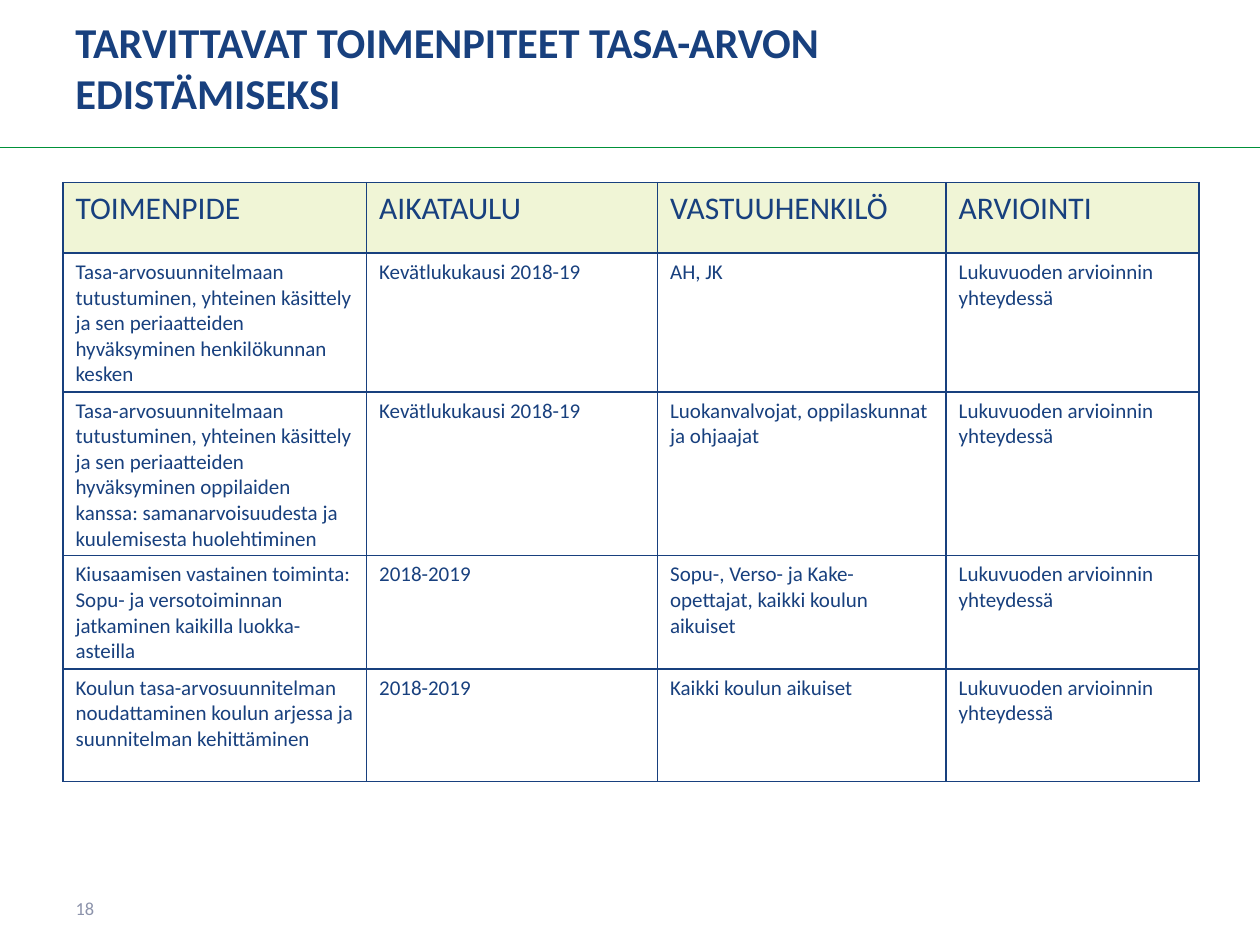
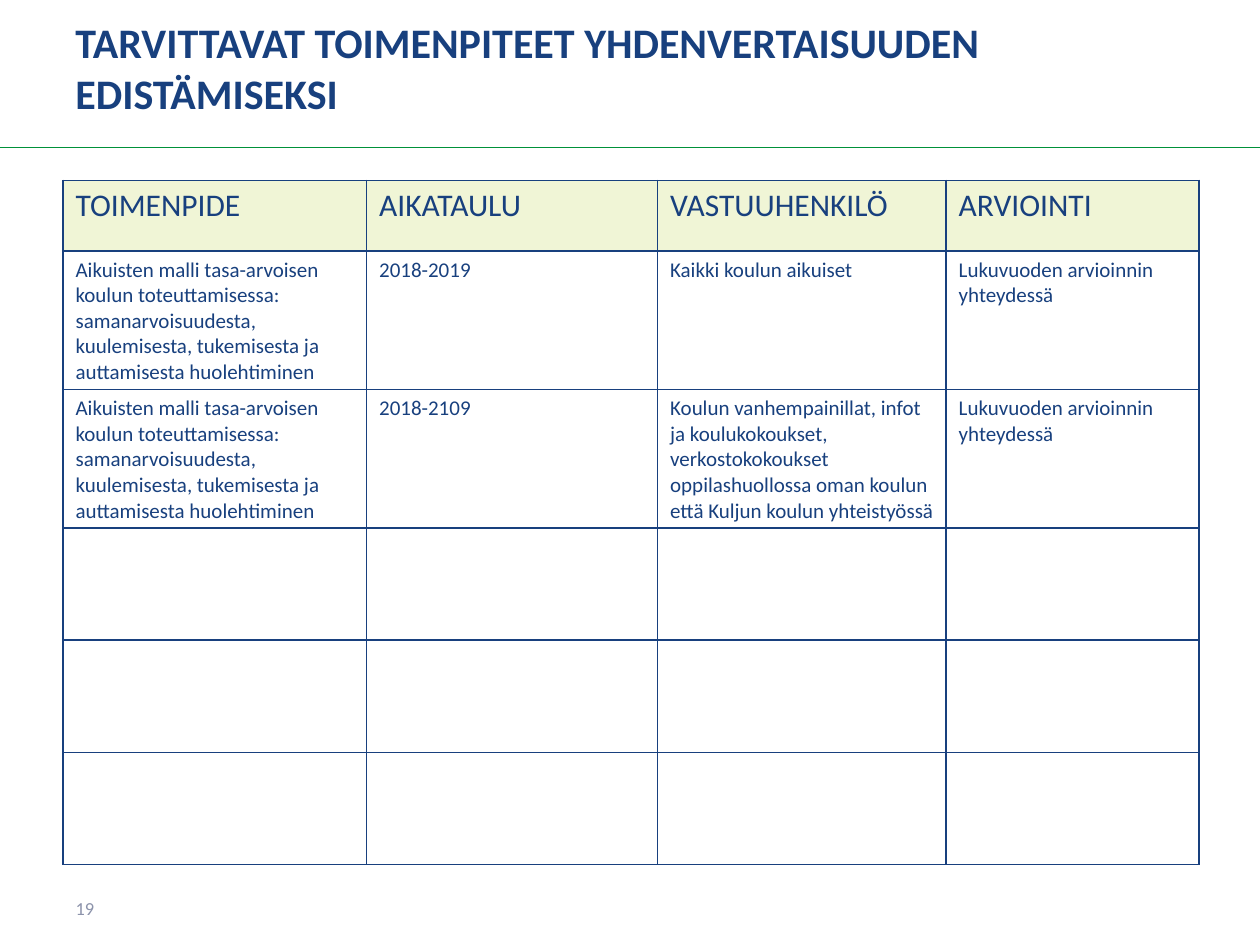
from dataclasses import dataclass

from lxml import etree
from pptx import Presentation
from pptx import util as u
from pptx.dml import color
from pptx.enum import shapes, text
from pptx.oxml import ns

Pt = u.Pt
COLORS = {
    "navy": "18407E",
    "rule": "009139",
    "page": "8C93AB",
    "header": "F0F5D6",
}
FONT = "Calibri"
SLIDE_WIDTH, SLIDE_HEIGHT = 720, 540
RULE_TOP = 84.2
TABLE_LEFT = 36
COLUMN_WIDTHS = (173.5, 166.3, 164.9, 144.5)
HEADER_HEIGHT, ROW_HEIGHT = 40.3, 64.1
HEADINGS = ("TOIMENPIDE", "AIKATAULU", "VASTUUHENKILÖ", "ARVIOINTI")
REVIEW = "Lukuvuoden arvioinnin yhteydessä"
ROLE_MODEL = (
    "Aikuisten malli tasa-arvoisen koulun toteuttamisessa: samanarvoisuudesta, "
    "kuulemisesta, tukemisesta ja auttamisesta huolehtiminen"
)
FAMILIARISING = (
    "Tasa-arvosuunnitelmaan tutustuminen, yhteinen käsittely ja sen "
    "periaatteiden hyväksyminen"
)


@dataclass(frozen=True)
class Measure:
    action: str
    schedule: str
    responsible: str
    review: str = REVIEW

    def cells(self) -> tuple[str, ...]:
        return self.action, self.schedule, self.responsible, self.review


@dataclass(frozen=True)
class Plan:
    page: int
    title: str
    title_size: float
    table_top: float
    measures: tuple[Measure, ...]
    spare_rows: int = 0


PLANS = (
    Plan(18, "TARVITTAVAT TOIMENPITEET TASA-ARVON EDISTÄMISEKSI", 24.3, 104.4, (
        Measure(f"{FAMILIARISING} henkilökunnan kesken",
                "Kevätlukukausi 2018-19", "AH, JK"),
        Measure(f"{FAMILIARISING} oppilaiden kanssa: samanarvoisuudesta ja "
                "kuulemisesta huolehtiminen",
                "Kevätlukukausi 2018-19",
                "Luokanvalvojat, oppilaskunnat ja ohjaajat"),
        Measure("Kiusaamisen vastainen toiminta: Sopu- ja versotoiminnan "
                "jatkaminen kaikilla luokka-asteilla",
                "2018-2019",
                "Sopu-, Verso- ja Kake-opettajat, kaikki koulun aikuiset"),
        Measure("Koulun tasa-arvosuunnitelman noudattaminen koulun arjessa ja "
                "suunnitelman kehittäminen",
                "2018-2019", "Kaikki koulun aikuiset"),
    )),
    Plan(19, "TARVITTAVAT TOIMENPITEET YHDENVERTAISUUDEN EDISTÄMISEKSI", 24, 103, (
        Measure(ROLE_MODEL, "2018-2019", "Kaikki koulun aikuiset"),
        Measure(ROLE_MODEL, "2018-2109",
                "Koulun vanhempainillat, infot ja koulukokoukset, "
                "verkostokokoukset oppilashuollossa oman koulun että Kuljun "
                "koulun yhteistyössä"),
    ), spare_rows=3),
)


def rgb(name: str) -> color.RGBColor:
    return color.RGBColor.from_string(COLORS[name])


def style(paragraph, size: float, color_name: str, bold: bool = False) -> None:
    font = paragraph.font
    font.name, font.size, font.bold = FONT, Pt(size), bold
    font.color.rgb = rgb(color_name)


def add_label(slide, box: tuple[float, ...], words: str, size: float,
              color_name: str, bold: bool = False, inset: bool = True) -> None:
    frame = slide.shapes.add_textbox(*map(Pt, box)).text_frame
    frame.word_wrap = True
    frame.vertical_anchor = text.MSO_ANCHOR.MIDDLE
    if not inset:
        frame.margin_left = frame.margin_right = 0
        frame.margin_top = frame.margin_bottom = 0
    frame.text = words
    style(frame.paragraphs[0], size, color_name, bold)


def add_rule(slide) -> None:
    rule = slide.shapes.add_connector(
        shapes.MSO_CONNECTOR.STRAIGHT, 0, Pt(RULE_TOP), Pt(SLIDE_WIDTH), Pt(RULE_TOP))
    rule.line.color.rgb = rgb("rule")
    rule.line.width = Pt(0.5)
    etree.SubElement(rule.element.spPr, ns.qn("a:effectLst"))


def add_borders(cell) -> None:
    properties = cell._tc.get_or_add_tcPr()
    for side in ("lnL", "lnR", "lnT", "lnB"):
        border = etree.SubElement(properties, ns.qn(f"a:{side}"), w=str(Pt(1)))
        fill = etree.SubElement(border, ns.qn("a:solidFill"))
        etree.SubElement(fill, ns.qn("a:srgbClr"), val=COLORS["navy"])


def add_measures(slide, plan: Plan) -> None:
    blank = ("",) * len(HEADINGS)
    rows = [HEADINGS, *(measure.cells() for measure in plan.measures),
            *[blank] * plan.spare_rows]
    heights = [HEADER_HEIGHT] + [ROW_HEIGHT] * (len(rows) - 1)
    table = slide.shapes.add_table(
        len(rows), len(HEADINGS), Pt(TABLE_LEFT), Pt(plan.table_top),
        Pt(sum(COLUMN_WIDTHS)), Pt(sum(heights))).table
    table.first_row = table.horz_banding = False
    for column, width in zip(table.columns, COLUMN_WIDTHS):
        column.width = Pt(width)
    for row_index, (words_in_row, height) in enumerate(zip(rows, heights)):
        table.rows[row_index].height = Pt(height)
        for column_index, words in enumerate(words_in_row):
            cell = table.cell(row_index, column_index)
            add_borders(cell)
            if row_index == 0:
                cell.fill.solid()
                cell.fill.fore_color.rgb = rgb("header")
            else:
                cell.fill.background()
            cell.text = words
            style(cell.text_frame.paragraphs[0], 18 if row_index == 0 else 12, "navy")


def add_plan(deck, plan: Plan) -> None:
    slide = deck.slides.add_slide(deck.slide_layouts[6])
    add_rule(slide)
    add_label(slide, (36, 7.2, 567.4, 62.6), plan.title, plan.title_size, "navy", bold=True)
    add_label(slide, (43.2, 510.5, 27.4, 17.3), str(plan.page), 10.5, "page", inset=False)
    add_measures(slide, plan)


def main() -> None:
    deck = Presentation()
    deck.slide_width, deck.slide_height = Pt(SLIDE_WIDTH), Pt(SLIDE_HEIGHT)
    for plan in PLANS:
        add_plan(deck, plan)
    deck.save("out.pptx")


if __name__ == "__main__":
    main()
